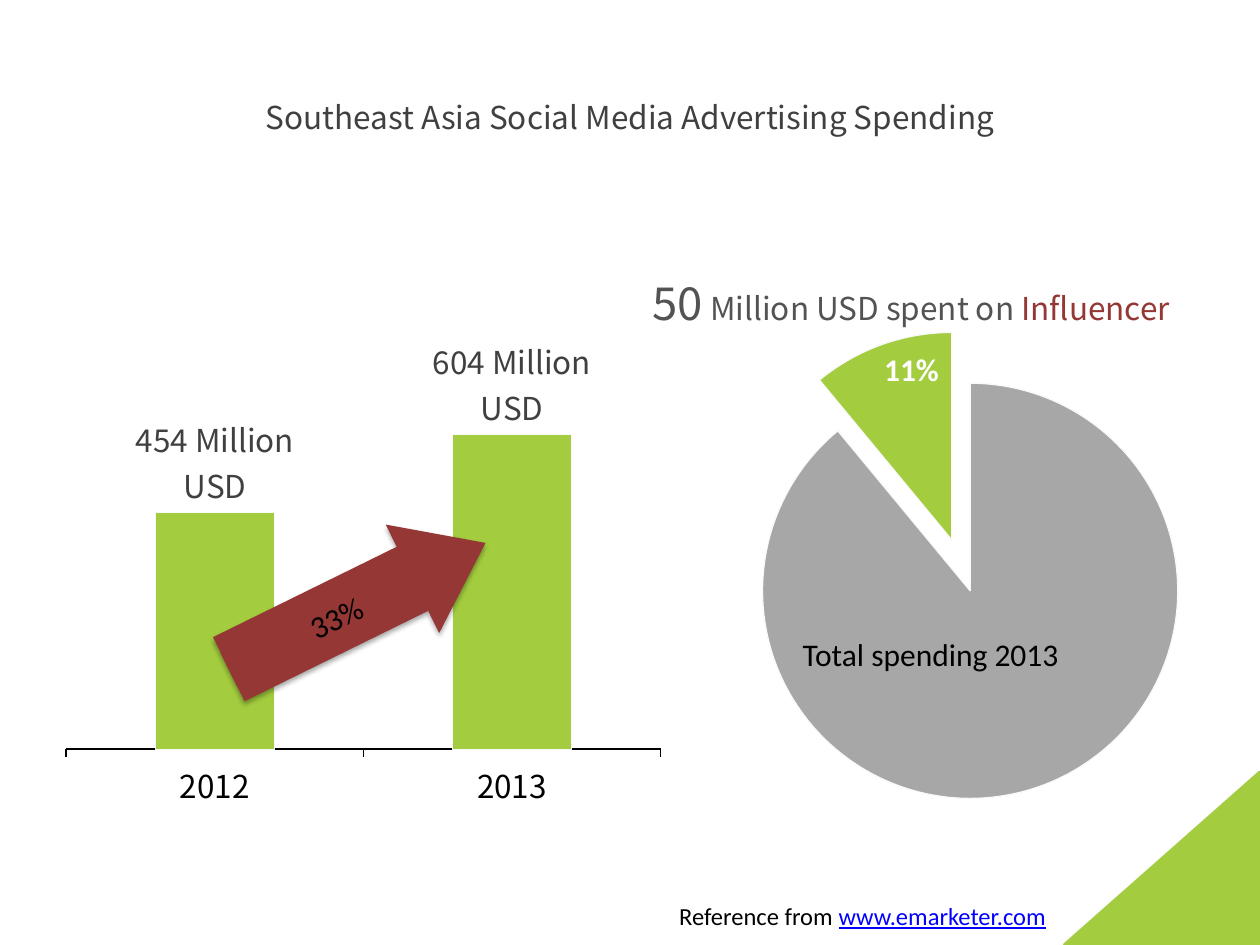
from lxml import etree
from pptx import Presentation
from pptx.chart.data import CategoryChartData
from pptx.dml.color import RGBColor
from pptx.enum.chart import XL_CHART_TYPE as ChartType, XL_LABEL_POSITION as LabelPosition
from pptx.enum.chart import XL_TICK_LABEL_POSITION as TickLabels, XL_TICK_MARK as TickMark
from pptx.enum.shapes import MSO_SHAPE as Shape
from pptx.enum.text import MSO_ANCHOR as Anchor, PP_ALIGN as Align
from pptx.oxml import parse_xml
from pptx.oxml.ns import nsdecls, qn
from pptx.util import Inches, Pt

COLORS = {name: RGBColor.from_string(value) for name, value in {
    "green": "A3CD3F", "red": "953735", "gray": "A7A7A7", "edge": "F9F9F9",
    "title": "404040", "headline": "535353", "link": "0000FF",
    "black": "000000", "white": "FFFFFF"}.items()}
SANS, BODY = "Noto Sans CJK SC", "Calibri"


def style_font(font, size, color, name):
    font.size, font.name = Pt(size), name
    font.color.rgb = COLORS[color]


def add_shadow(shape):
    shape.shadow.inherit = False
    effects = shape._element.spPr.find(qn("a:effectLst"))
    effects.append(parse_xml(
        f'<a:outerShdw {nsdecls("a")} blurRad="{Pt(3)}" dist="{Pt(1.8)}" dir="5400000" '
        'rotWithShape="0"><a:srgbClr val="000000"><a:alpha val="35000"/></a:srgbClr></a:outerShdw>'))


presentation = Presentation()
presentation.slide_width, presentation.slide_height = Inches(10), Inches(7.5)
slide = presentation.slides.add_slide(presentation.slide_layouts[5])
shapes = slide.shapes

# Title
title = shapes.title
title.left, title.top, title.width, title.height = (Inches(v) for v in (0.5, 0.3, 9, 1.25))
title.text_frame.text = "Southeast Asia Social Media Advertising Spending"
title.text_frame.vertical_anchor = Anchor.MIDDLE
title.text_frame.paragraphs[0].alignment = Align.CENTER
style_font(title.text_frame.paragraphs[0].runs[0].font, 18, "title", SANS)

# Corner triangle
corner = shapes.add_shape(Shape.RIGHT_TRIANGLE, Inches(8.45), Inches(6.13), Inches(1.55), Inches(1.37))
corner._element.spPr.find(qn("a:xfrm")).set("flipH", "1")
corner.fill.solid()
corner.fill.fore_color.rgb = corner.line.color.rgb = COLORS["green"]
corner.line.width = Pt(2)
add_shadow(corner)

# Charts: spending per year, and the share spent on influencers
charts = []
for kind, name, categories, values, colors, box, plot_area in (
        (ChartType.COLUMN_CLUSTERED, "Series 1", ("2012", "2013"), (454, 604), ("green", "green"),
         (0.33, 2.68, 4.92, 3.79), (0.04, 0.081, 0.96, 0.781)),
        (ChartType.PIE, "Region 1", ("1", "2"), (89, 11), ("gray", "green"),
         (5.64, 2.63, 4.12, 4.12), (0.1, 0.1, 0.8, 0.8))):
    data = CategoryChartData()
    data.categories = categories
    data.add_series(name, values)
    chart = shapes.add_chart(kind, *(Inches(v) for v in box), data).chart
    chart.has_title = chart.has_legend = False
    style_font(chart.font, 10, "black", "Cambria")
    chart.plots[0].vary_by_categories = False
    for index, color in enumerate(colors):
        point_format = chart.series[0].points[index].format
        point_format.fill.solid()
        point_format.fill.fore_color.rgb = COLORS[color]
        point_format.line.color.rgb = COLORS["edge"]
        point_format.line.width = Pt(0.75)
    plot_element = chart._chartSpace.chart.plotArea
    for old_layout in plot_element.findall(qn("c:layout")):
        plot_element.remove(old_layout)
    settings = [("layoutTarget", "inner"), ("xMode", "edge"), ("yMode", "edge"), *zip("xywh", plot_area)]
    layout = etree.Element(qn("c:layout"))
    manual = etree.SubElement(layout, qn("c:manualLayout"))
    for tag, value in settings:
        etree.SubElement(manual, qn(f"c:{tag}")).set("val", str(value))
    plot_element.insert(0, layout)
    charts.append(chart)
column_chart, pie_chart = charts

# Column axes and labels
column_plot = column_chart.plots[0]
column_plot.gap_width = 150
category_axis, value_axis = column_chart.category_axis, column_chart.value_axis
style_font(category_axis.tick_labels.font, 18, "black", SANS)
category_axis.major_tick_mark = TickMark.OUTSIDE
category_axis.format.line.color.rgb = COLORS["black"]
category_axis.format.line.width = Pt(1)
value_axis.minimum_scale, value_axis.maximum_scale, value_axis.major_unit = 0, 715, 175
value_axis.has_major_gridlines = False
value_axis.major_tick_mark = TickMark.NONE
value_axis.tick_label_position = TickLabels.NONE
value_axis.format.line.fill.background()
column_labels = column_chart.series[0].data_labels
column_labels.show_value = True
column_labels.number_format = '#,##0" Million USD"'
column_labels.number_format_is_linked = False
column_labels.position = LabelPosition.OUTSIDE_END
style_font(column_labels.font, 18, "title", SANS)

# Exploded pie slice with its percentage
pie_series = pie_chart.series[0]
pie_label = pie_series.points[1].data_label
style_font(pie_label.font, 18, "white", BODY)
pie_label.font.bold = True
pie_label.position = LabelPosition.INSIDE_END
for tag, value in (("showVal", "0"), ("showPercent", "1")):
    pie_series._element.xpath(f"c:dLbls/c:dLbl/c:{tag}")[0].set("val", value)
slice_element = pie_series._element.xpath("c:dPt[c:idx/@val='1']")[0]
explosion = etree.Element(qn("c:explosion"))
explosion.set("val", "26")
slice_element.find(qn("c:spPr")).addprevious(explosion)

# Growth arrow
arrow = shapes.add_shape(Shape.RIGHT_ARROW, Inches(1.7), Inches(4.33), Inches(2.27), Inches(0.96))
arrow.adjustments[0], arrow.adjustments[1] = 0.59, 0.673
growth = shapes.add_shape(Shape.RECTANGLE, Inches(1.72), Inches(4.75), Inches(1.89), Inches(0.3))
for shape in (arrow, growth):
    shape.rotation = 333.8
    shape.fill.solid()
    shape.fill.fore_color.rgb = COLORS["red"]
    shape.line.fill.background()
add_shadow(arrow)
growth.shadow.inherit = False
frame = growth.text_frame
frame.margin_left = frame.margin_right = frame.margin_top = frame.margin_bottom = 0
frame.vertical_anchor = Anchor.MIDDLE
frame.text = "33%"
frame.paragraphs[0].alignment = Align.CENTER
style_font(frame.paragraphs[0].runs[0].font, 18, "black", BODY)

# Pie caption, headline and reference
for box, runs in (
        ((6.32, 4.99, 2.18, 0.4), [("Total spending 2013", 18, "black", BODY)]),
        ((5.13, 2.13, 4.26, 0.54), [("50", 26, "headline", SANS),
                                    (" Million USD spent on ", 18, "headline", SANS),
                                    ("Influencer", 18, "red", SANS)]),
        ((5.34, 7.1, 3.09, 0.34), [("Reference from ", 14, "black", BODY),
                                   ("www.emarketer.com", 14, "link", BODY)])):
    frame = shapes.add_textbox(*(Inches(v) for v in box)).text_frame
    frame.margin_left = frame.margin_right = frame.margin_top = frame.margin_bottom = Inches(0.05)
    frame.word_wrap = False
    for text, size, color, font_name in runs:
        run = frame.paragraphs[0].add_run()
        run.text = text
        style_font(run.font, size, color, font_name)
        if color == "link":
            run.font.underline = True

presentation.save("out.pptx")
